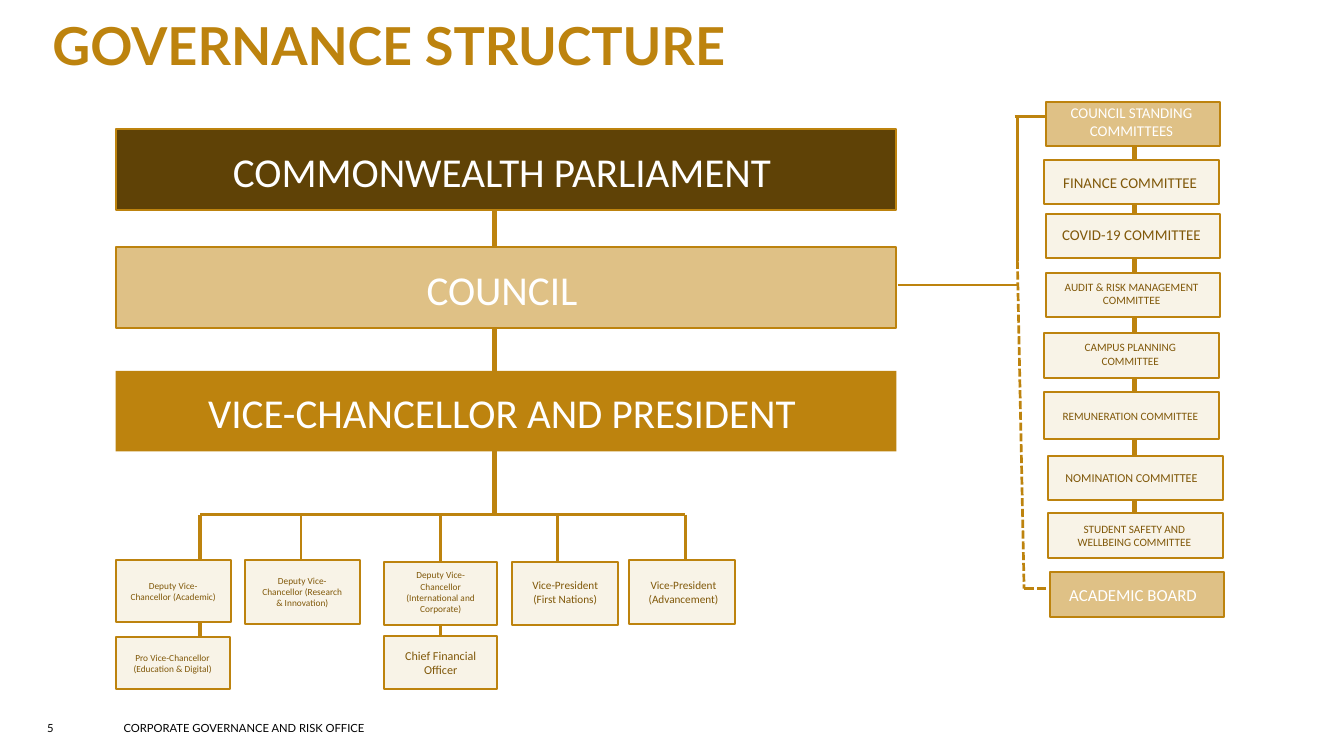
from dataclasses import dataclass
from itertools import pairwise

from lxml.etree import SubElement
from pptx import Presentation
from pptx.dml.color import RGBColor
from pptx.enum.dml import MSO_LINE_DASH_STYLE as Dash
from pptx.enum.shapes import MSO_CONNECTOR as Conn, MSO_SHAPE as Shape
from pptx.enum.text import MSO_ANCHOR as Anchor, MSO_AUTO_SIZE as AutoSize, PP_ALIGN as Align
from pptx.oxml.ns import qn
from pptx.util import Inches, Pt


@dataclass(frozen=True)
class Theme:
    gold: str = "BD830E"
    dark: str = "5F4206"
    tan: str = "DFC186"
    cream: str = "F8F3E7"
    brown: str = "805809"
    white: str = "FFFFFF"
    black: str = "000000"
    heading_font: str = "Lato"
    body_font: str = "Calibri"
    title_size: float = 28
    tier_size: float = 22
    footer_size: float = 6
    border: float = 1.08
    thin: float = 1.44
    medium: float = 1.69
    strong: float = 1.94
    link: float = 2.78
    trunk: float = 2.91


T = Theme()


@dataclass(frozen=True)
class Box:
    x: float
    y: float
    w: float
    h: float
    lines: tuple[str, ...]
    size: float
    fill: str = T.cream
    color: str = T.brown
    border: bool = True
    dx: float = 0  # shift of the text from the box centre
    dy: float = 0

    @property
    def bottom(self) -> float:
        return self.y + self.h


@dataclass(frozen=True)
class Line:
    x1: float
    y1: float
    x2: float
    y2: float
    width: float = T.thin
    dashed: bool = False


def rgb(value: str) -> RGBColor:
    return RGBColor.from_string(value)


def write(tf, lines, size: float, color: str, font: str, align=Align.LEFT, bold=False) -> None:
    tf.word_wrap = True
    tf.auto_size = AutoSize.NONE
    tf.vertical_anchor = Anchor.MIDDLE
    p = tf.paragraphs[0]
    p.alignment = align
    for i, text in enumerate(lines):
        if i:
            p.add_line_break()
        r = p.add_run()
        r.text = text
        r.font.name, r.font.size, r.font.bold = font, Pt(size), bold
        r.font.color.rgb = rgb(color)


def set_margins(tf, left=0.0, top=0.0, right=0.0, bottom=0.0) -> None:
    tf.margin_left, tf.margin_top = Inches(left), Inches(top)
    tf.margin_right, tf.margin_bottom = Inches(right), Inches(bottom)


def draw_box(s, b: Box) -> None:
    sp = s.shapes.add_shape(Shape.RECTANGLE, Inches(b.x), Inches(b.y), Inches(b.w), Inches(b.h))
    sp.shadow.inherit = False
    sp.fill.solid()
    sp.fill.fore_color.rgb = rgb(b.fill)
    if b.border:
        sp.line.color.rgb = rgb(T.gold)
        sp.line.width = Pt(T.border)
    else:
        sp.line.fill.background()
    tf = sp.text_frame
    set_margins(tf, max(0, 2 * b.dx), max(0, 2 * b.dy), max(0, -2 * b.dx), max(0, -2 * b.dy))
    write(tf, b.lines, b.size, b.color, T.body_font, Align.CENTER)


def draw_line(s, ln: Line) -> None:
    c = s.shapes.add_connector(Conn.STRAIGHT, Inches(ln.x1), Inches(ln.y1),
                               Inches(ln.x2), Inches(ln.y2))
    c.line.color.rgb = rgb(T.gold)
    c.line.width = Pt(ln.width)
    if ln.dashed:
        c.line.dash_style = Dash.SQUARE_DOT
    SubElement(c.element.spPr, qn("a:effectLst"))


def draw_footer(s, x: float, w: float, text: str) -> None:
    tf = s.shapes.add_textbox(Inches(x), Inches(5.35), Inches(w), Inches(0.13)).text_frame
    set_margins(tf)
    write(tf, [text], T.footer_size, T.black, T.heading_font)


def tier(y: float, text: str, fill: str, border: bool = True) -> Box:
    return Box(0.86, y, 5.81, 0.6, (text,), T.tier_size, fill, T.white, border, -0.03, 0.01)


def committee(x: float, y: float, size: float, *lines: str, h: float = 0.33,
              dx: float = -0.01, **style) -> Box:
    return Box(x, y, 1.3, h, lines, size, dx=dx, **style)


# Main tiers
tiers = [
    tier(0.96, "COMMONWEALTH PARLIAMENT", T.dark),
    tier(1.84, "COUNCIL", T.tan),
    tier(2.76, "VICE-CHANCELLOR AND PRESIDENT", T.gold, border=False),
]

# Council committees
lead = {"fill": T.tan, "color": T.white}
committees = [
    committee(7.78, 0.76, 8, "COUNCIL STANDING", "COMMITTEES", dy=-0.02, **lead),
    committee(7.77, 1.19, 8, "FINANCE COMMITTEE"),
    committee(7.78, 1.59, 8, "COVID-19 COMMITTEE", dy=-0.01),
    committee(7.78, 2.03, 6, "AUDIT & RISK MANAGEMENT", "COMMITTEE", dy=-0.01),
    committee(7.77, 2.48, 6, "CAMPUS PLANNING", "COMMITTEE", dy=-0.01),
    committee(7.77, 2.92, 6, "REMUNERATION COMMITTEE", h=0.35),
    committee(7.8, 3.39, 6.5, "NOMINATION COMMITTEE", dx=-0.03),
    committee(7.8, 3.82, 6, "STUDENT SAFETY AND", "WELLBEING COMMITTEE"),
]
academic_board = committee(7.81, 4.26, 9, "ACADEMIC BOARD", dx=-0.03, **lead)

# Executive team and its reports
executives = [
    Box(0.86, 4.17, 0.86, 0.46, ("Deputy Vice-", "Chancellor (Academic)"), 5),
    Box(1.82, 4.17, 0.86, 0.47, ("Deputy Vice-", "Chancellor (Research", "& Innovation)"), 5),
    Box(2.86, 4.18, 0.84, 0.47,
        ("Deputy Vice-", "Chancellor", "(International and", "Corporate)"), 5, dy=-0.01),
    Box(3.81, 4.18, 0.79, 0.47, ("Vice-President", "(First Nations)"), 6, dy=-0.01),
    Box(4.68, 4.17, 0.79, 0.47, ("Vice-President", "(Advancement)"), 6, dx=0.01),
]
reports = [
    Box(0.86, 4.74, 0.85, 0.39, ("Pro Vice-Chancellor", "(Education & Digital)"), 5),
    Box(2.86, 4.73, 0.84, 0.4, ("Chief Financial", "Officer"), 6.5),
]

# Connecting lines
BUS_Y, LINK_X, BRANCH_X = 3.83, 8.44, 7.57
drop_xs = [1.49, 2.24, 3.28, 4.15, 5.1]
lines = [
    Line(3.68, tiers[0].bottom, 3.68, BUS_Y, T.trunk),
    Line(drop_xs[0], BUS_Y, drop_xs[-1], BUS_Y),
    *(Line(x, BUS_Y, x, b.y, T.strong if x == drop_xs[0] else T.thin)
      for x, b in zip(drop_xs, executives)),
    Line(1.49, executives[0].bottom, 1.49, reports[0].y, T.strong),
    Line(3.28, executives[2].bottom, 3.28, reports[1].y),
    *(Line(LINK_X, a.bottom, LINK_X, b.y, T.link) for a, b in pairwise(committees)),
    Line(LINK_X, 4.59, 8.48, 4.59, 0.29),
    Line(6.68, 2.12, BRANCH_X, 2.12),
    Line(BRANCH_X, 0.88, BRANCH_X, 1.94),
    Line(7.55, 0.87, 7.78, 0.87, T.medium),
    Line(BRANCH_X, 1.94, 7.62, 4.38, dashed=True),
    Line(7.62, 4.38, academic_board.x, 4.38, T.medium, dashed=True),
]


def main() -> None:
    prs = Presentation()
    prs.slide_width, prs.slide_height = Inches(10), Inches(10 * 9 / 16)
    s = prs.slides.add_slide(prs.slide_layouts[5])

    # Title
    title = s.shapes.title
    title.left, title.top = Inches(0.38), Inches(0.08)
    title.width, title.height = Inches(5.59), Inches(0.5)
    set_margins(title.text_frame, left=0.01)
    write(title.text_frame, ["GOVERNANCE STRUCTURE"], T.title_size, T.gold,
          T.heading_font, bold=True)

    # Chart: lines first, boxes on top
    for ln in lines:
        draw_line(s, ln)
    for b in [*tiers, *executives, *reports, *committees, academic_board]:
        draw_box(s, b)

    # Footer
    draw_footer(s, 0.35, 0.18, "5")
    draw_footer(s, 0.92, 2.2, "CORPORATE GOVERNANCE AND RISK OFFICE")

    prs.save("out.pptx")


if __name__ == "__main__":
    main()
